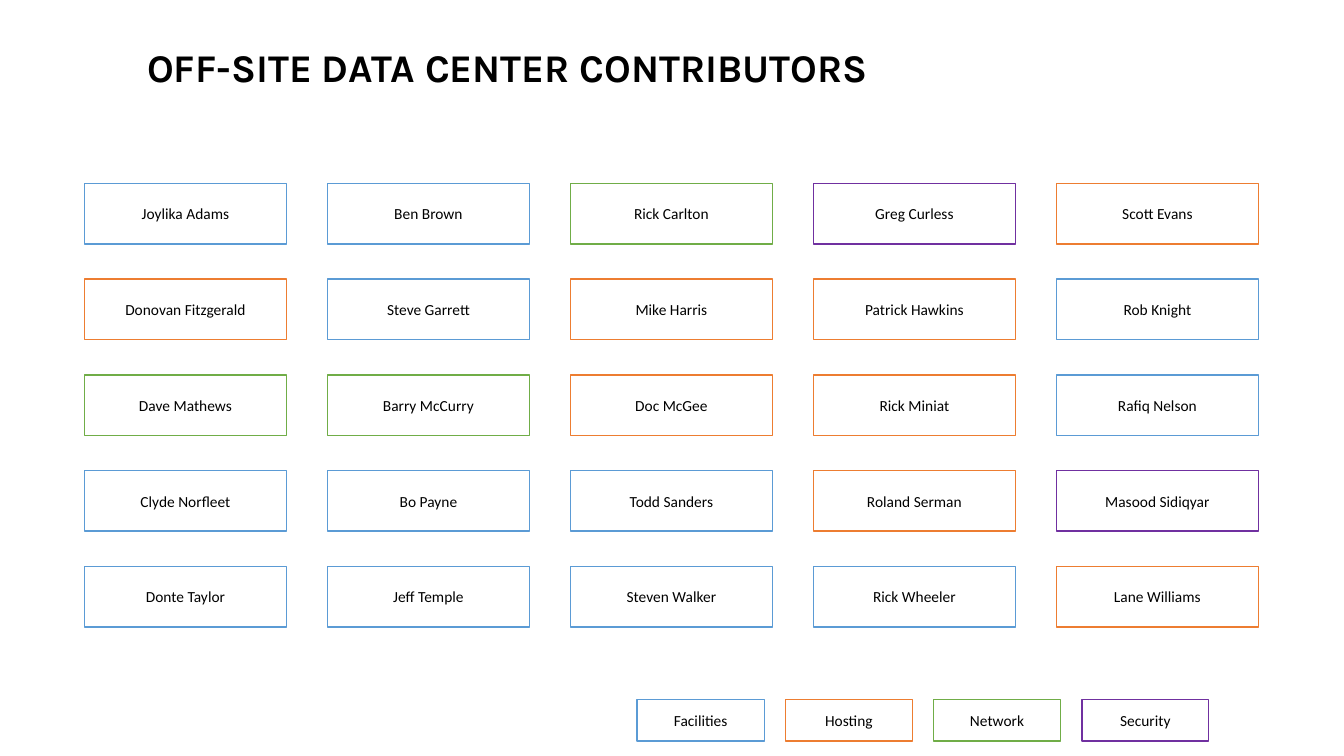
from pptx import Presentation
from pptx.dml.color import RGBColor
from pptx.enum.shapes import MSO_SHAPE as Shape
from pptx.enum.text import MSO_ANCHOR as Anchor, MSO_AUTO_SIZE as AutoSize, PP_ALIGN as Align
from pptx.util import Inches, Pt

TITLE = "OFF-SITE DATA CENTER CONTRIBUTORS"
COLORS = {
    "Facilities": "5B9BD5",
    "Hosting": "ED7D31",
    "Network": "70AD47",
    "Security": "7030A0",
    "text": "000000",
    "fill": "FFFFFF",
}
TEAMS = ["Facilities", "Hosting", "Network", "Security"]
CONTRIBUTORS = [
    [("Joylika Adams", "Facilities"), ("Ben Brown", "Facilities"), ("Rick Carlton", "Network"),
     ("Greg Curless", "Security"), ("Scott Evans", "Hosting")],
    [("Donovan Fitzgerald", "Hosting"), ("Steve Garrett", "Facilities"), ("Mike Harris", "Hosting"),
     ("Patrick Hawkins", "Hosting"), ("Rob Knight", "Facilities")],
    [("Dave Mathews", "Network"), ("Barry McCurry", "Network"), ("Doc McGee", "Hosting"),
     ("Rick Miniat", "Hosting"), ("Rafiq Nelson", "Facilities")],
    [("Clyde Norfleet", "Facilities"), ("Bo Payne", "Facilities"), ("Todd Sanders", "Facilities"),
     ("Roland Serman", "Hosting"), ("Masood Sidiqyar", "Security")],
    [("Donte Taylor", "Facilities"), ("Jeff Temple", "Facilities"), ("Steven Walker", "Facilities"),
     ("Rick Wheeler", "Facilities"), ("Lane Williams", "Hosting")],
]
# Boxes drawn as plain rectangles; the others are process symbols
RECTANGLES = {"Joylika Adams", "Ben Brown", "Donovan Fitzgerald", "Steve Garrett", "Barry McCurry",
              "Rick Miniat", "Donte Taylor", "Hosting", "Security"}

# Grid and legend measures, in inches
GRID_LEFT, GRID_TOP, COLUMN_STEP, ROW_STEP = 0.84, 1.82, 2.41, 0.95
NAME_SIZE = (2, 0.6)
LEGEND_LEFT, LEGEND_TOP, LEGEND_STEP = 6.32, 6.94, 1.47
LEGEND_SIZE = (1.26, 0.41)


def write_text(frame, text, *, font, size, bold=False, align=Align.LEFT, spacing=1.0):
    frame.word_wrap = True
    frame.auto_size = AutoSize.NONE
    frame.vertical_anchor = Anchor.MIDDLE
    para = frame.paragraphs[0]
    para.alignment = align
    para.line_spacing = spacing
    span = para.add_run()
    span.text = text
    span.font.name = font
    span.font.size = Pt(size)
    span.font.bold = bold
    span.font.color.rgb = RGBColor.from_string(COLORS["text"])


def add_box(page, text, team, left, top, size):
    kind = Shape.RECTANGLE if text in RECTANGLES else Shape.FLOWCHART_PROCESS
    box = page.shapes.add_shape(kind, Inches(left), Inches(top), *map(Inches, size))
    box.shadow.inherit = False
    box.fill.solid()
    box.fill.fore_color.rgb = RGBColor.from_string(COLORS["fill"])
    box.line.color.rgb = RGBColor.from_string(COLORS[team])
    box.line.width = Pt(1)
    frame = box.text_frame
    frame.margin_left = frame.margin_right = 0
    frame.margin_top = frame.margin_bottom = Inches(0.1)
    write_text(frame, text, font="Calibri", size=11, align=Align.CENTER)


def main():
    deck = Presentation()
    deck.slide_width, deck.slide_height = Inches(13.33), Inches(7.5)
    page = deck.slides.add_slide(deck.slide_layouts[5])

    # Title
    title = page.shapes.title
    title.left, title.top = Inches(1.36), Inches(0.2)
    title.width, title.height = Inches(11.73), Inches(0.99)
    write_text(title.text_frame, TITLE, font="Karla", size=28, bold=True, spacing=0.9)

    # Contributor grid
    for row, people in enumerate(CONTRIBUTORS):
        for column, (name, team) in enumerate(people):
            add_box(page, name, team, GRID_LEFT + column * COLUMN_STEP,
                    GRID_TOP + row * ROW_STEP, NAME_SIZE)

    # Team legend
    for index, team in enumerate(TEAMS):
        add_box(page, team, team, LEGEND_LEFT + index * LEGEND_STEP, LEGEND_TOP, LEGEND_SIZE)

    deck.save("out.pptx")


if __name__ == "__main__":
    main()
